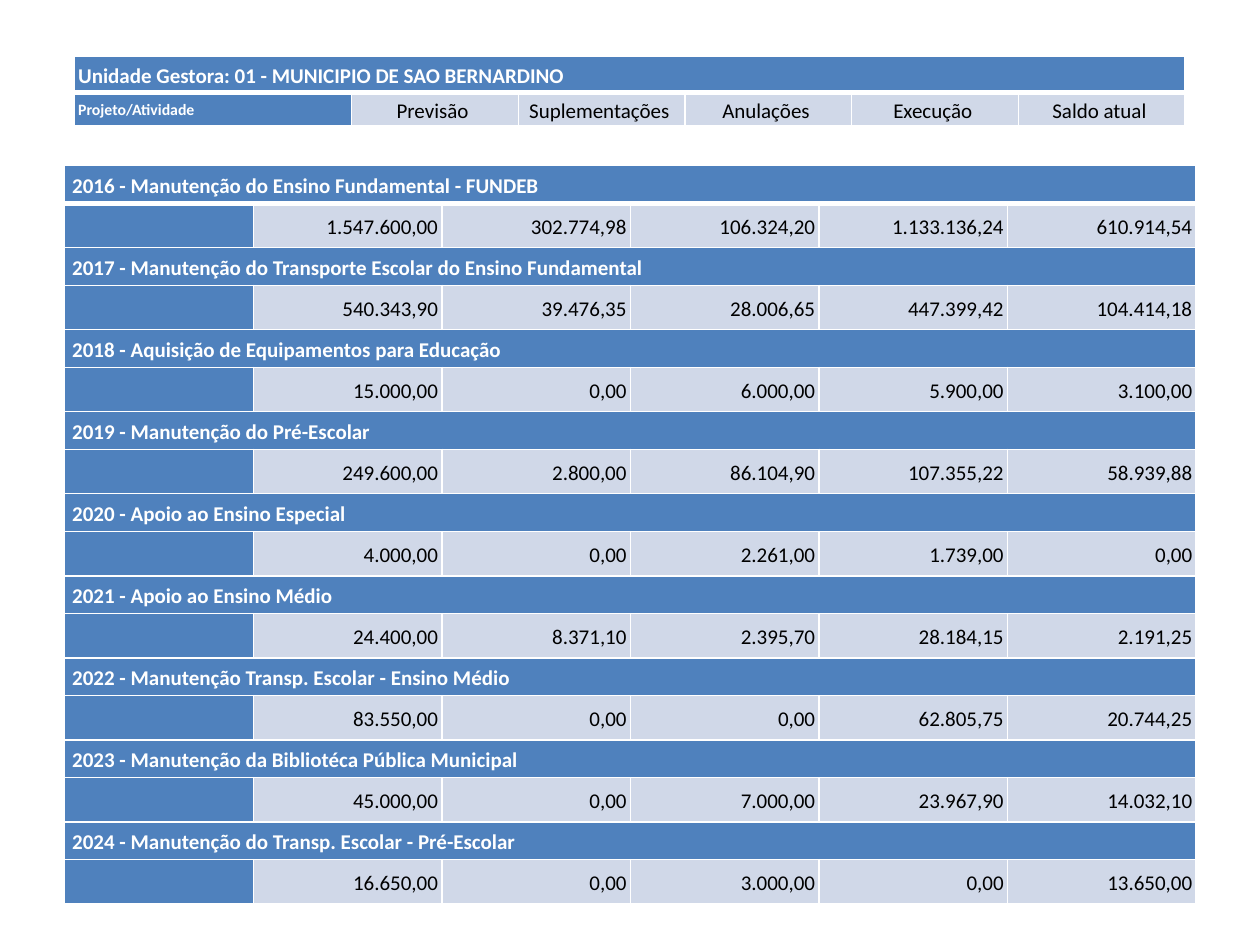
from dataclasses import dataclass

from pptx import Presentation
from pptx.dml.color import RGBColor as RGB
from pptx.enum.text import MSO_ANCHOR as Anchor, PP_ALIGN as Align
from pptx.oxml.ns import qn
from pptx.util import Pt
from lxml.etree import SubElement


@dataclass(frozen=True)
class Theme:
    font: str = "Calibri"
    blue: RGB = RGB(0x4F, 0x81, 0xBD)
    pale: RGB = RGB(0xD0, 0xD8, 0xE8)
    white: RGB = RGB(0xFF, 0xFF, 0xFF)
    black: RGB = RGB(0, 0, 0)
    body: float = 12
    small: float = 9
    line: float = 1
    heavy_line: float = 3
    spacing: float = 1.15


@dataclass(frozen=True)
class CellStyle:
    fill: RGB
    color: RGB
    bold: bool = False
    size: float = 12
    align: Align = Align.LEFT
    pad_x: float = 2.2
    pad_y: float = 0.7


@dataclass(frozen=True)
class Project:
    name: str
    amounts: str


T = Theme()
UNIT = CellStyle(T.blue, T.white, True, T.body)
CORNER = CellStyle(T.blue, T.white, True, T.small)
COLUMN = CellStyle(T.pale, T.black, False, T.body, Align.CENTER)
PROJECT = CellStyle(T.blue, T.white, True, T.body, pad_x=4.3)
SIDE = CellStyle(T.blue, T.white, True, T.body, pad_y=0)
AMOUNT = CellStyle(T.pale, T.black, False, T.body, Align.RIGHT, pad_y=2.2)

COLUMNS = ["Previsão ", "Suplementações ", "Anulações ", "Execução ", "Saldo atual "]
PROJECTS = [
    Project("2016 - Manutenção do Ensino Fundamental - FUNDEB",
            "1.547.600,00 302.774,98 106.324,20 1.133.136,24 610.914,54"),
    Project("2017 - Manutenção do Transporte Escolar do Ensino Fundamental",
            "540.343,90 39.476,35 28.006,65 447.399,42 104.414,18"),
    Project("2018 - Aquisição de Equipamentos para Educação",
            "15.000,00 0,00 6.000,00 5.900,00 3.100,00"),
    Project("2019 - Manutenção do Pré-Escolar",
            "249.600,00 2.800,00 86.104,90 107.355,22 58.939,88"),
    Project("2020 - Apoio ao Ensino Especial",
            "4.000,00 0,00 2.261,00 1.739,00 0,00"),
    Project("2021 - Apoio ao Ensino Médio",
            "24.400,00 8.371,10 2.395,70 28.184,15 2.191,25"),
    Project("2022 - Manutenção Transp. Escolar - Ensino Médio",
            "83.550,00 0,00 0,00 62.805,75 20.744,25"),
    Project("2023 - Manutenção da Bibliotéca Pública Municipal",
            "45.000,00 0,00 7.000,00 23.967,90 14.032,10"),
    Project("2024 - Manutenção do Transp. Escolar - Pré-Escolar",
            "16.650,00 0,00 3.000,00 0,00 13.650,00"),
]


def set_borders(cell, top: float, bottom: float) -> None:
    tc_pr = cell._tc.get_or_add_tcPr()
    widths = {"a:lnL": T.line, "a:lnR": T.line, "a:lnT": top, "a:lnB": bottom}
    for i, (tag, width) in enumerate(widths.items()):
        ln = SubElement(tc_pr, qn(tag), w=str(Pt(width)))
        SubElement(SubElement(ln, qn("a:solidFill")), qn("a:srgbClr"), val=str(T.white))
        tc_pr.insert(i, ln)  # borders must precede the fill


def fill_cell(cell, text: str, style: CellStyle) -> None:
    cell.fill.solid()
    cell.fill.fore_color.rgb = style.fill
    cell.vertical_anchor = Anchor.MIDDLE
    cell.margin_left = cell.margin_right = Pt(style.pad_x)
    cell.margin_top = cell.margin_bottom = Pt(style.pad_y)
    p = cell.text_frame.paragraphs[0]
    if text:
        p.add_run().text = text
    p.alignment = style.align
    p.line_spacing = T.spacing
    f = p.font
    f.name, f.size, f.bold = T.font, Pt(style.size), style.bold
    f.color.rgb = style.color


def add_grid(slide, left: float, top: float, widths: list[float], heights: list[float]):
    """Add a table with white rules, the one under the first row being heavy."""
    frame = slide.shapes.add_table(len(heights), len(widths), Pt(left), Pt(top),
                                   Pt(sum(widths)), Pt(sum(heights)))
    table = frame.table
    table.horz_banding = False
    for column, width in zip(table.columns, widths):
        column.width = Pt(width)
    for i, (row, height) in enumerate(zip(table.rows, heights)):
        row.height = Pt(height)
        for cell in row.cells:
            set_borders(cell, T.heavy_line if i == 1 else T.line,
                        T.heavy_line if i == 0 else T.line)
    return table


def fill_pair(table, row: int, band: tuple[str, CellStyle], side: tuple[str, CellStyle],
              values: list[str], value_style: CellStyle) -> None:
    """Fill a full-width band and the row of a side cell and values below it."""
    last = len(table.columns) - 1
    for col in range(last + 1):
        fill_cell(table.cell(row, col), band[0] if col == 0 else "", band[1])
    table.cell(row, 0).merge(table.cell(row, last))
    fill_cell(table.cell(row + 1, 0), *side)
    for col, value in enumerate(values, 1):
        fill_cell(table.cell(row + 1, col), value, value_style)


def main() -> None:
    prs = Presentation()
    prs.slide_width, prs.slide_height = Pt(720), Pt(540)
    s = prs.slides.add_slide(prs.slide_layouts[6])

    projects = add_grid(s, 37, 94.6, [107.75] * 6, [21.6, 25.3] * len(PROJECTS))
    for i, project in enumerate(PROJECTS):
        fill_pair(projects, 2 * i, (project.name, PROJECT), ("", SIDE),
                  project.amounts.split(), AMOUNT)

    header = add_grid(s, 42.5, 32, [158.4] + [95.3] * 5, [21, 18.6])
    fill_pair(header, 0, ("Unidade Gestora: 01 - MUNICIPIO DE SAO BERNARDINO", UNIT),
              ("Projeto/Atividade", CORNER), COLUMNS, COLUMN)

    prs.save("out.pptx")


if __name__ == "__main__":
    main()
